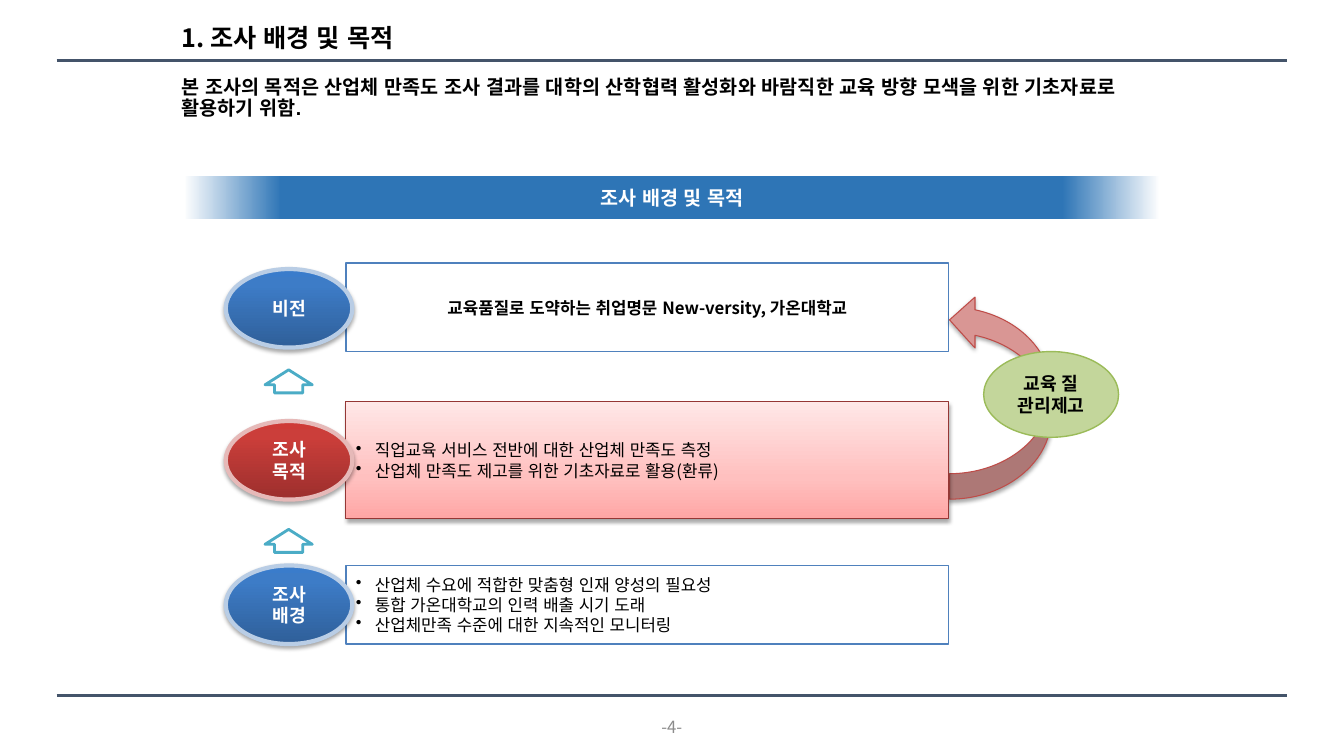
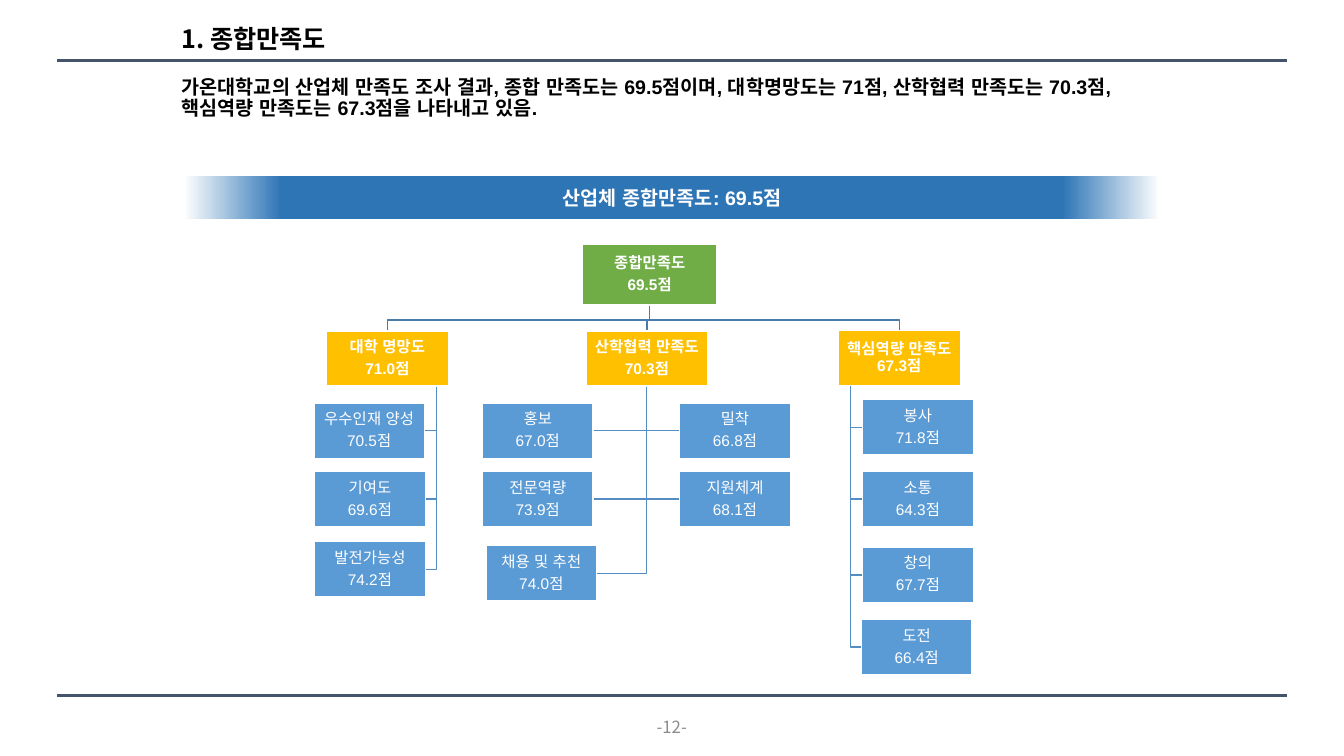
from lxml import etree
from pptx import Presentation
from pptx.dml.color import RGBColor
from pptx.enum.shapes import MSO_CONNECTOR, MSO_SHAPE
from pptx.enum.text import MSO_ANCHOR, MSO_AUTO_SIZE, PP_ALIGN
from pptx.oxml.ns import qn
from pptx.util import Cm, Pt

RECTANGLE, OVAL = MSO_SHAPE.RECTANGLE, MSO_SHAPE.OVAL
UP_ARROW, CURVED_ARROW = MSO_SHAPE.UP_ARROW, MSO_SHAPE.CURVED_LEFT_ARROW
STRAIGHT = MSO_CONNECTOR.STRAIGHT
LEFT, CENTER = PP_ALIGN.LEFT, PP_ALIGN.CENTER
TOP, MIDDLE = MSO_ANCHOR.TOP, MSO_ANCHOR.MIDDLE

NOTO, ARIAL = "Noto Sans CJK KR", "Arial"
BLACK, WHITE = "000000", "FFFFFF"
NAVY, GRAY = "44546A", "8C8C8C"
BLUE, GREEN, YELLOW, LIGHT_BLUE = "4F81BD", "70AD47", "FFC000", "5B9BD5"
BUS_COLOR, TRUNK_COLOR = "497CAB", "538DC1"

# Gradients: angle, then (position in percent, colour)
BAND_GRADIENT = (0, [(0, WHITE), (10, "2E75B6"), (90, "2E75B6"), (100, WHITE)])
BLUE_GRADIENT = (270, [(0, "2F5F99"), (80, "3D7CC7"), (100, "3A7CCB")])
RED_GRADIENT = (270, [(0, "9C2F2D"), (80, "CB3E3A"), (100, "CE3B37")])
PINK_GRADIENT = (270, [(0, "FFA6A5"), (35, "FFC0BF"), (100, "FFE7E7")])


def paint(fill, color):
    fill.solid()
    fill.fore_color.rgb = RGBColor.from_string(color)


def write(shape, text, font=NOTO, size=12, color=BLACK, bold=False, align=CENTER,
          anchor=MIDDLE, wrap=True, spacing=None, after=0, bullet=None, inset=None):
    """Each line of text is a paragraph; bullet False removes an inherited one."""
    frame = shape.text_frame
    frame.auto_size = MSO_AUTO_SIZE.NONE
    frame.word_wrap = wrap
    frame.vertical_anchor = anchor
    if inset is not None:
        frame.margin_left = frame.margin_right = Cm(inset)
        frame.margin_top = frame.margin_bottom = Cm(inset)
    frame.text = text
    for paragraph in frame.paragraphs:
        paragraph.alignment = align
        paragraph.line_spacing = spacing
        paragraph.space_before = Pt(0)
        paragraph.space_after = Pt(after)
        for run in paragraph.runs:
            run.font.name, run.font.size, run.font.bold = font, Pt(size), bold
            paint(run.font.fill, color)
    for properties in shape.element.iter(qn("a:rPr")):
        etree.SubElement(properties, qn("a:ea")).set("typeface", ARIAL)
    if bullet is not None:
        indent = Cm(0.48) if bullet else 0
        for properties in shape.element.iter(qn("a:pPr")):
            properties.set("marL", str(indent))
            properties.set("indent", str(-indent))
            if bullet:
                etree.SubElement(properties, qn("a:buChar")).set("char", "•")
            else:
                etree.SubElement(properties, qn("a:buNone"))


presentation = Presentation()
presentation.slide_width, presentation.slide_height = Cm(33.87), Cm(19.05)
layout = presentation.slide_layouts[1]
gradients, shadowed = [], []

# Shared parts: title, message, band and page number
pages = [
    ("1. 조사 배경 및 목적", 0.52, 6.45,
     "본 조사의 목적은 산업체 만족도 조사 결과를 대학의 산학협력 활성화와 바람직한 교육 방향 모색을 "
     "위한 기초자료로 활용하기 위함.",
     "조사 배경 및 목적", "-4-"),
    ("1. 종합만족도", 0.54, 4.7,
     "가온대학교의 산업체 만족도 조사 결과, 종합 만족도는 69.5점이며, 대학명망도는 71점, "
     "산학협력 만족도는 70.3점, 핵심역량 만족도는 67.3점을 나타내고 있음.",
     "산업체 종합만족도: 69.5점", "-12-"),
]
for title_text, title_top, title_width, message_text, band_text, page_text in pages:
    slide = presentation.slides.add_slide(layout)
    title, message = slide.shapes.title, slide.placeholders[1]
    title.left, title.top = Cm(4.32), Cm(title_top)
    title.width, title.height = Cm(title_width), Cm(0.94)
    write(title, title_text, size=18, bold=True, align=LEFT, spacing=0.9)
    message.left, message.top = Cm(4.32), Cm(1.83)
    message.width, message.height = Cm(25.2), Cm(1.35)
    write(message, message_text, font=ARIAL, size=14, bold=True, align=LEFT,
          anchor=TOP, spacing=0.9, after=3, bullet=False)

    band = slide.shapes.add_shape(RECTANGLE, Cm(4.63), Cm(4.43), Cm(24.61), Cm(1.09))
    band.shadow.inherit = False
    band.line.fill.background()
    gradients.append((band, BAND_GRADIENT))
    write(band, band_text, font=ARIAL, size=14, color=WHITE, bold=True)

    page_number = slide.shapes.add_textbox(Cm(16.23), Cm(17.93), Cm(1.4), Cm(0.76))
    write(page_number, page_text, color=GRAY, wrap=False)

purpose_slide, score_slide = presentation.slides

# Header and footer rules, moved to the layout
for rule_id, y in enumerate((1.52, 17.53), start=20):
    rule = purpose_slide.shapes.add_connector(STRAIGHT, Cm(1.43), Cm(y), Cm(32.44), Cm(y))
    rule.line.width = Pt(2)
    paint(rule.line.fill, NAVY)
    etree.SubElement(rule.element.spPr, qn("a:effectLst"))
    rule.element.nvCxnSpPr.cNvPr.set("id", str(rule_id))
    layout.shapes.element.append(rule.element)

# Slide 1: vision, purpose and background
oval_text = {"size": 13, "color": WHITE, "bold": True}
list_text = {"align": LEFT, "bullet": True}
# preset, (left, top, width, height), fill, line colour, line width, shadow, text, format
diagram = [
    (RECTANGLE, (8.72, 6.63, 15.19, 2.23), WHITE, BLUE, 1, False,
     "교육품질로 도약하는 취업명문 New-versity, 가온대학교", {"bold": True, "after": 3}),
    (CURVED_ARROW, (23.93, 7.42, 2.57, 5.16), "D99694", "BF4C48", 0.75, True, "", {}),
    (OVAL, (24.79, 8.86, 3.4, 2.16), "C3D69B", "9BBB59", 1, False,
     "교육 질 관리제고", {"size": 13, "bold": True}),
    (RECTANGLE, (8.72, 14.25, 15.19, 1.98), WHITE, BLUE, 1, False,
     "산업체 수요에 적합한 맞춤형 인재 양성의 필요성\n통합 가온대학교의 인력 배출 시기 도래\n"
     "산업체만족 수준에 대한 지속적인 모니터링", list_text),
    (RECTANGLE, (8.72, 10.13, 15.19, 2.94), PINK_GRADIENT, "953735", 0.75, True,
     "직업교육 서비스 전반에 대한 산업체 만족도 측정\n"
     "산업체 만족도 제고를 위한 기초자료로 활용(환류)", list_text),
    (OVAL, (5.69, 10.61, 3.19, 1.98), RED_GRADIENT, "E6B9B8", 3, True, "조사\n목적", oval_text),
    (OVAL, (5.69, 6.78, 3.19, 1.98), BLUE_GRADIENT, "B9CDE5", 3, True, "비전", oval_text),
    (OVAL, (5.69, 14.25, 3.19, 1.98), BLUE_GRADIENT, "B9CDE5", 3, True, "조사\n배경", oval_text),
    (UP_ARROW, (6.68, 9.32, 1.19, 0.58), WHITE, "4BACC6", 2, False, "", {}),
    (UP_ARROW, (6.68, 13.34, 1.19, 0.58), WHITE, "4BACC6", 2, False, "", {}),
]
for preset, box, fill, line_color, line_width, has_shadow, text, text_format in diagram:
    shape = purpose_slide.shapes.add_shape(preset, *map(Cm, box))
    shape.shadow.inherit = False
    shape.line.width = Pt(line_width)
    paint(shape.line.fill, line_color)
    if isinstance(fill, str):
        paint(shape.fill, fill)
    else:
        gradients.append((shape, fill))
    if has_shadow:
        shadowed.append(shape)
    if preset == UP_ARROW:
        shape.adjustments[0], shape.adjustments[1] = 0.6, 0.65
    if preset == CURVED_ARROW:
        shape.element.spPr.find(qn("a:xfrm")).set("flipV", "1")
    if text:
        write(shape, text, **text_format)

# Slide 2: score cards; a key names each card, its first letter names the branch
ROOT_SIZE, BRANCH_SIZE, LEAF_SIZE = (3.39, 1.54), (3.07, 1.39), (2.79, 1.39)
card_data = [
    ("root", "종합만족도\n69.5점", 14.68, 6.15, ROOT_SIZE, GREEN),
    ("A", "대학 명망도\n71.0점", 8.23, 8.34, BRANCH_SIZE, YELLOW),
    ("B", "산학협력 만족도\n70.3점", 14.77, 8.34, BRANCH_SIZE, YELLOW),
    ("C", "핵심역량 만족도\v67.3점", 21.13, 8.33, BRANCH_SIZE, YELLOW),
    ("A1", "우수인재 양성\n70.5점", 7.91, 10.16, LEAF_SIZE, LIGHT_BLUE),
    ("A2", "기여도\n69.6점", 7.93, 11.88, LEAF_SIZE, LIGHT_BLUE),
    ("A3", "발전가능성\n74.2점", 7.93, 13.65, LEAF_SIZE, LIGHT_BLUE),
    ("B1", "홍보\n67.0점", 12.16, 10.16, LEAF_SIZE, LIGHT_BLUE),
    ("B2", "밀착\n66.8점", 17.13, 10.16, LEAF_SIZE, LIGHT_BLUE),
    ("B3", "전문역량\n73.9점", 12.16, 11.88, LEAF_SIZE, LIGHT_BLUE),
    ("B4", "지원체계\n68.1점", 17.13, 11.88, LEAF_SIZE, LIGHT_BLUE),
    ("B5", "채용 및 추천\n74.0점", 12.25, 13.75, LEAF_SIZE, LIGHT_BLUE),
    ("C1", "봉사\n71.8점", 21.74, 10.07, LEAF_SIZE, LIGHT_BLUE),
    ("C2", "소통\n64.3점", 21.74, 11.88, LEAF_SIZE, LIGHT_BLUE),
    ("C3", "창의\n67.7점", 21.74, 13.79, LEAF_SIZE, LIGHT_BLUE),
    ("C4", "도전\n66.4점", 21.71, 15.61, LEAF_SIZE, LIGHT_BLUE),
]
cards = {}
for key, text, left, top, size, fill in card_data:
    card = score_slide.shapes.add_shape(RECTANGLE, Cm(left), Cm(top), *map(Cm, size))
    card.shadow.inherit = False
    card.line.width = Pt(1)
    paint(card.fill, fill)
    paint(card.line.fill, WHITE)
    write(card, text, font=ARIAL, size=11, color=WHITE, bold=fill != LIGHT_BLUE,
          spacing=0.9, after=3.85, inset=0.03)
    cards[key] = card

# Bent tree lines: one from the root to each branch, one from a branch to each leaf
root = cards["root"]
root_x, root_bottom = root.left + root.width // 2, root.top + root.height
bus_y = Cm(8.06)
tree_lines = []
for key, trunk_x in (("A", Cm(11)), ("B", Cm(16.3)), ("C", Cm(21.44))):
    branch = cards[key]
    branch_x, branch_bottom = branch.left + branch.width // 2, branch.top + branch.height
    tree_lines.append((BUS_COLOR, [(root_x, root_bottom), (root_x, bus_y),
                                   (branch_x, bus_y), (branch_x, branch.top)]))
    for name, leaf in cards.items():
        if name[0] == key and name != key:
            leaf_y = leaf.top + leaf.height // 2
            edge = leaf.left if leaf.left > trunk_x else leaf.left + leaf.width
            tree_lines.append((TRUNK_COLOR, [(trunk_x, branch_bottom), (trunk_x, leaf_y),
                                             (edge, leaf_y)]))
for color, (start, *bends) in tree_lines:
    builder = score_slide.shapes.build_freeform(*start)
    builder.add_line_segments(bends, close=False)
    tree_line = builder.convert_to_shape()
    tree_line.shadow.inherit = False
    tree_line.fill.background()
    tree_line.line.width = Pt(1)
    paint(tree_line.line.fill, color)
    score_slide.shapes.element.insert(2, tree_line.element)  # behind the cards

# Gradients and shadows
for shape, (angle, stops) in gradients:
    shape.fill.gradient()
    gradient = shape.element.spPr.find(qn("a:gradFill"))
    for child in list(gradient):
        gradient.remove(child)
    stop_list = etree.SubElement(gradient, qn("a:gsLst"))
    for position, color in stops:
        stop = etree.SubElement(stop_list, qn("a:gs"), pos=str(position * 1000))
        etree.SubElement(stop, qn("a:srgbClr"), val=color)
    etree.SubElement(gradient, qn("a:lin"), ang=str(angle * 60000), scaled="0")
for shape in shadowed:
    effects = shape.element.spPr.find(qn("a:effectLst"))
    shadow = etree.SubElement(effects, qn("a:outerShdw"), blurRad=str(Pt(3.1)),
                              dist=str(Pt(1.8)), dir="5400000", rotWithShape="0")
    shadow_color = etree.SubElement(shadow, qn("a:srgbClr"), val=BLACK)
    etree.SubElement(shadow_color, qn("a:alpha"), val="35000")

presentation.save("out.pptx")
